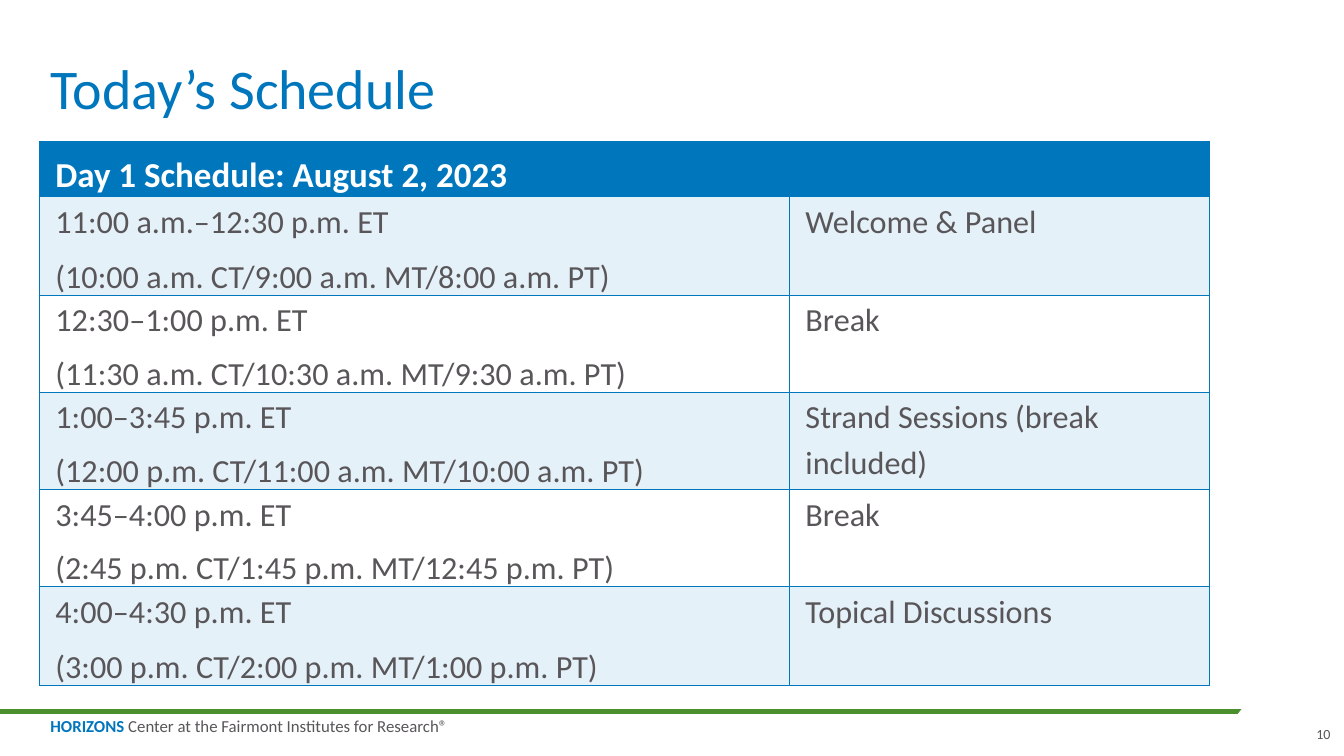
from dataclasses import dataclass

from lxml import etree
from pptx import Presentation, util as u
from pptx.dml import color
from pptx.enum import shapes, text
from pptx.oxml import ns


@dataclass(frozen=True)
class Theme:
    font: str = "Calibri"
    blue: str = "0076BD"
    gray: str = "59565A"
    green: str = "4C902D"
    pale: str = "E5F1F8"
    white: str = "FFFFFF"
    title: int = 40
    head: int = 25
    body: int = 23
    foot: int = 12
    num: int = 10


T = Theme()

# Time in ET, time in other zones, session, space before, space after
ROWS = [
    ("11:00 a.m.–12:30 p.m. ET", "(10:00 a.m. CT/9:00 a.m. MT/8:00 a.m. PT)",
     "Welcome & Panel", 4, 3),
    ("12:30–1:00 p.m. ET", "(11:30 a.m. CT/10:30 a.m. MT/9:30 a.m. PT)",
     "Break", 3, 3),
    ("1:00–3:45 p.m. ET", "(12:00 p.m. CT/11:00 a.m. MT/10:00 a.m. PT)",
     "Strand Sessions (break included)", 3, 3),
    ("3:45–4:00 p.m. ET", "(2:45 p.m. CT/1:45 p.m. MT/12:45 p.m. PT)",
     "Break", 3, 3),
    ("4:00–4:30 p.m. ET", "(3:00 p.m. CT/2:00 p.m. MT/1:00 p.m. PT)",
     "Topical Discussions", 3, 4),
]


def rgb(tone):
    return color.RGBColor.from_string(tone)


def put(item, vals):
    for key, val in vals.items():
        setattr(item, key, val)


def pts(box):
    return [u.Pt(n) for n in box]


def add_run(para, words, size, tone, bold=False):
    run = para.add_run()
    run.text = words
    put(run.font, {"name": T.font, "size": u.Pt(size), "bold": bold})
    run.font.color.rgb = rgb(tone)


def add_text(slide, box, runs, frame_fmt, para_fmt):
    frame = slide.shapes.add_textbox(*pts(box)).text_frame
    put(frame, {"margin_left": 0, "margin_right": 0, "margin_top": 0,
                "margin_bottom": 0, **frame_fmt})
    para = frame.paragraphs[0]
    put(para, para_fmt)
    for run in runs:
        add_run(para, *run)


# Footer: green rule with a slanted end, and the center's name
def add_foot(slide, box):
    left, top, wide, _ = box
    line = slide.shapes.add_connector(
        shapes.MSO_CONNECTOR.STRAIGHT, *pts((left, top, left + wide, top)))
    line.line.color.rgb = rgb(T.green)
    line.line.width = u.Pt(3)
    etree.SubElement(line._element.spPr, ns.qn("a:effectLst"))

    add_text(slide, (left + 36, top + 5, 289.5, 12.25),
             [("HORIZONS", T.foot, T.blue, True),
              (" Center at the Fairmont Institutes for Research®",
               T.foot, T.gray)],
             {"word_wrap": False}, {"line_spacing": 0.85})

    mask = slide.shapes.add_shape(
        shapes.MSO_SHAPE.OVAL,
        *pts((left + wide - 60.5, top - 20.9, 85.7, 41.8)))
    put(mask, {"rotation": 332.1})
    mask.shadow.inherit = False
    mask.fill.solid()
    mask.fill.fore_color.rgb = rgb(T.white)
    mask.line.fill.background()


def add_title(slide, box):
    add_text(slide, box, [("Today’s Schedule", T.title, T.blue)],
             {"word_wrap": True,
              "vertical_anchor": text.MSO_ANCHOR.BOTTOM},
             {"line_spacing": 0.9})


def add_num(slide, box):
    add_text(slide, box, [("10", T.num, T.gray)],
             {"word_wrap": False,
              "vertical_anchor": text.MSO_ANCHOR.BOTTOM},
             {"alignment": text.PP_ALIGN.RIGHT})


def edge(cell):
    props = cell._tc.get_or_add_tcPr()
    for side in "LRTB":
        line = etree.SubElement(props, ns.qn(f"a:ln{side}"),
                                w=str(u.Pt(0.75)))
        fill = etree.SubElement(line, ns.qn("a:solidFill"))
        etree.SubElement(fill, ns.qn("a:srgbClr"), val=T.blue)


def fill_cell(cell, lines, back, style, before=0, after=0,
              anchor=text.MSO_ANCHOR.TOP):
    put(cell, {"margin_left": u.Pt(11.5), "margin_right": u.Pt(11.5),
               "margin_top": 0, "margin_bottom": 0,
               "vertical_anchor": anchor})
    edge(cell)
    cell.fill.solid()
    cell.fill.fore_color.rgb = rgb(back)
    frame = cell.text_frame
    for i, words in enumerate(lines):
        para = frame.add_paragraph() if i else frame.paragraphs[0]
        put(para, {"line_spacing": 1.15, "space_after": u.Pt(after),
                   "space_before": u.Pt(before if i else 0)})
        add_run(para, words, *style)


# Schedule: one heading across both columns, then banded rows
def add_plan(slide, box):
    table = slide.shapes.add_table(len(ROWS) + 1, 2, *pts(box)).table
    put(table, {"first_row": False, "horz_banding": False})
    for col, share in zip(table.columns, (0.641, 0.359)):
        col.width = u.Pt(round(box[2] * share, 1))
    head = 39.6
    for i, row in enumerate(table.rows):
        row.height = u.Pt((box[3] - head) / len(ROWS) if i else head)

    table.cell(0, 0).merge(table.cell(0, 1))
    for col, lines in enumerate((["Day 1 Schedule: August 2, 2023"], [])):
        fill_cell(table.cell(0, col), lines, T.blue,
                  (T.head, T.white, True), after=6,
                  anchor=text.MSO_ANCHOR.BOTTOM)
    style = (T.body, T.gray)
    for i, (time, zones, event, before, after) in enumerate(ROWS, 1):
        back = T.pale if i % 2 else T.white
        for col, lines in enumerate(([time, zones], [event])):
            fill_cell(table.cell(i, col), lines, back, style, before, after)


def main():
    deck = Presentation()
    put(deck, {"slide_width": u.Pt(960), "slide_height": u.Pt(540)})
    slide = deck.slides.add_slide(deck.slide_layouts[6])
    add_foot(slide, (0, 508.3, 936, 31.7))
    add_title(slide, (36, 0, 892.8, 87.1))
    add_plan(slide, (28.1, 100.8, 835.9, 381.6))
    add_num(slide, (938.2, 518.4, 12.2, 12.2))
    deck.save("out.pptx")


if __name__ == "__main__":
    main()
